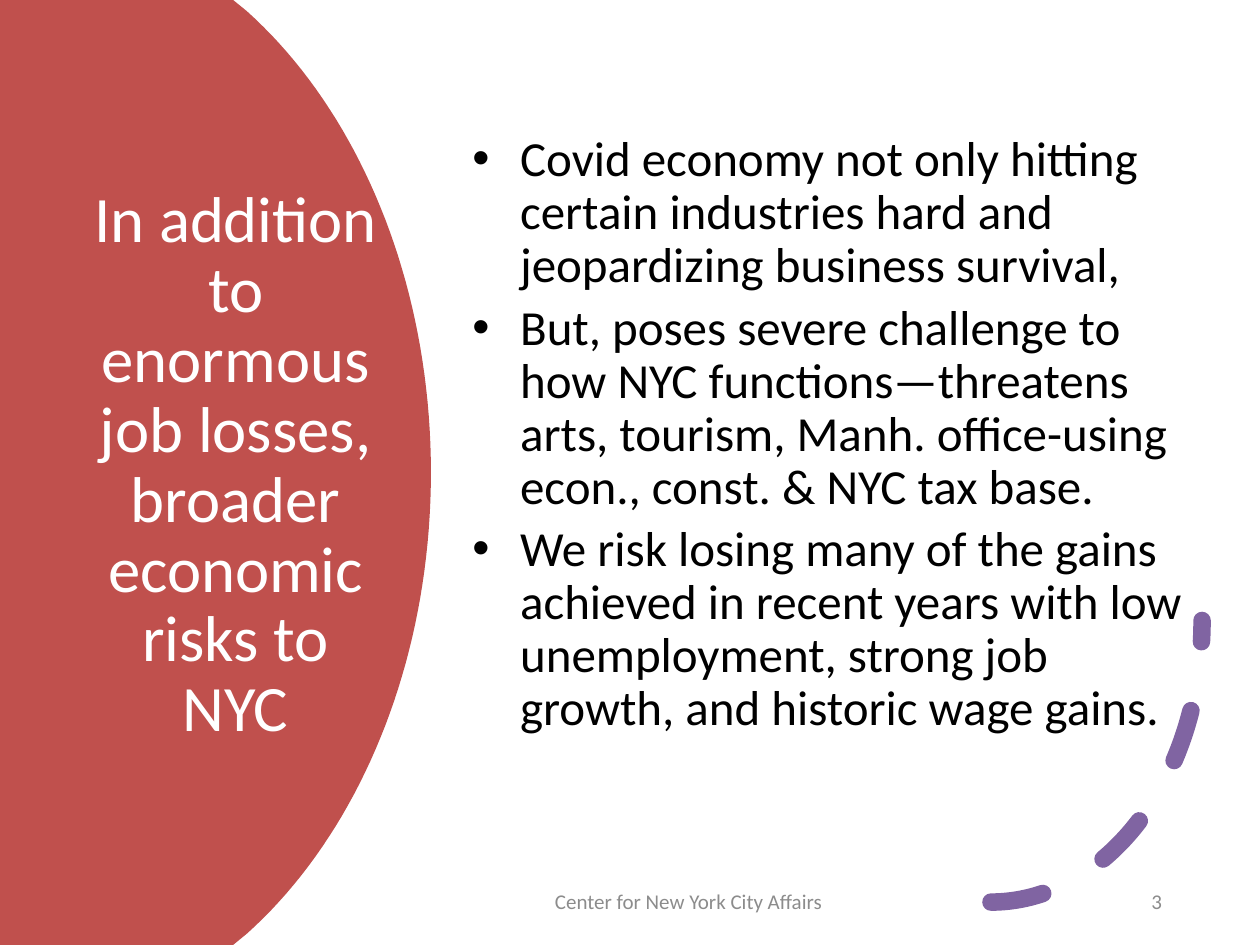
from dataclasses import dataclass

from lxml.etree import SubElement
from pptx import Presentation
from pptx.dml.color import RGBColor
from pptx.enum.dml import MSO_LINE
from pptx.enum.shapes import MSO_SHAPE as Shape
from pptx.enum.text import MSO_ANCHOR as Anchor, MSO_AUTO_SIZE as AutoSize, PP_ALIGN as Align
from pptx.oxml.ns import qn
from pptx.util import Inches, Pt


@dataclass(frozen=True)
class Theme:
    font: str = "Calibri"
    panel: RGBColor = RGBColor(0xC0, 0x50, 0x4D)
    accent: RGBColor = RGBColor(0x80, 0x64, 0xA2)
    on_panel: RGBColor = RGBColor(0xFF, 0xFF, 0xFF)
    body: RGBColor = RGBColor(0, 0, 0)
    muted: RGBColor = RGBColor(0x8C, 0x8C, 0x8C)
    title_size: int = 37
    body_size: int = 28
    footer_size: int = 12
    arc_width: int = 10
    line_spacing: float = 0.9


TITLE = "In addition to enormous job losses, broader economic risks to NYC"
RISKS = [
    "Covid economy not only hitting certain industries hard and jeopardizing business survival,",
    "But, poses severe challenge to how NYC functions—threatens arts, tourism, "
    "Manh. office-using econ., const. & NYC tax base.",
    "We risk losing many of the gains achieved in recent years with low unemployment, "
    "strong job growth, and historic wage gains.",
]


def bezier(start, control_1, control_2, end, steps=40):
    """Points along a cubic curve, both ends included."""
    points = []
    for step in range(steps + 1):
        t = step / steps
        weights = ((1 - t) ** 3, 3 * t * (1 - t) ** 2, 3 * t * t * (1 - t), t ** 3)
        points.append(tuple(sum(w * c for w, c in zip(weights, axis))
                            for axis in zip(start, control_1, control_2, end)))
    return points


class SlideBuilder:
    def __init__(self, slide, theme):
        self.slide = slide
        self.theme = theme

    def place(self, shape, left, top, width, height):
        shape.left, shape.top = Inches(left), Inches(top)
        shape.width, shape.height = Inches(width), Inches(height)

    def frame(self, shape):
        text = shape.text_frame
        text.word_wrap = True
        text.auto_size = AutoSize.NONE
        text.vertical_anchor = Anchor.MIDDLE
        return text

    def add_words(self, paragraph, words, size, color, align):
        paragraph.alignment = align
        run = paragraph.add_run()
        run.text = words
        run.font.name = self.theme.font
        run.font.size = Pt(size)
        run.font.color.rgb = color

    def panel(self, height):
        """Left panel with a bulging right edge, placed behind everything."""
        upper = [(1.85, 0)] + bezier((1.96, 0.09), (2.84, 0.88), (3.42, 2.23), (3.42, height / 2))
        lower = [(x, height - y) for x, y in reversed(upper[:-1])]
        outline = [(Inches(x), Inches(y)) for x, y in upper + lower + [(0, height)]]
        builder = self.slide.shapes.build_freeform(0, 0)
        builder.add_line_segments(outline, close=True)
        panel = builder.convert_to_shape()
        panel.shadow.inherit = False
        panel.fill.solid()
        panel.fill.fore_color.rgb = self.theme.panel
        panel.line.fill.background()
        self.slide.shapes.element.insert(2, panel.element)

    def title(self, words, *box):
        title = self.slide.shapes.title
        self.place(title, *box)
        paragraph = self.frame(title).paragraphs[0]
        paragraph.line_spacing = self.theme.line_spacing
        self.add_words(paragraph, words, self.theme.title_size, self.theme.on_panel, Align.CENTER)

    def dashed_arc(self, *box):
        arc = self.slide.shapes.add_shape(Shape.ARC, *map(Inches, box))
        arc.shadow.inherit = False
        arc.fill.background()
        arc.line.color.rgb = self.theme.accent
        arc.line.width = Pt(self.theme.arc_width)
        arc.line.dash_style = MSO_LINE.DASH
        properties = arc.element.spPr
        properties.find(qn("a:xfrm")).set("flipV", "1")
        properties.find(qn("a:ln")).set("cap", "rnd")

    def bullets(self, items, *box):
        text = self.frame(self.slide.shapes.add_textbox(*map(Inches, box)))
        for index, item in enumerate(items):
            paragraph = text.add_paragraph() if index else text.paragraphs[0]
            paragraph.line_spacing = self.theme.line_spacing
            paragraph.space_before = Pt(0.2 * self.theme.body_size)
            self.add_words(paragraph, item, self.theme.body_size, self.theme.body, Align.LEFT)
            properties = paragraph._p.get_or_add_pPr()
            properties.set("marL", str(Inches(0.38)))
            properties.set("indent", str(-Inches(0.38)))
            SubElement(properties, qn("a:buFont"), typeface="Arial")
            SubElement(properties, qn("a:buChar"), char="•")

    def footer(self, words, align, *box):
        paragraph = self.frame(self.slide.shapes.add_textbox(*map(Inches, box))).paragraphs[0]
        paragraph.space_after = Pt(6)
        self.add_words(paragraph, words, self.theme.footer_size, self.theme.muted, align)


def main():
    deck = Presentation()
    deck.slide_width, deck.slide_height = Inches(10), Inches(7.5)
    title_only = deck.slide_layouts[5]
    page = SlideBuilder(deck.slides.add_slide(title_only), Theme())
    page.panel(7.5)
    page.title(TITLE, 0.56, 1.26, 2.62, 4.88)
    page.dashed_arc(6.19, 2.69, 3.35, 4.47)
    page.bullets(RISKS, 3.65, 0.15, 6.02, 6.61)
    page.footer("Center for New York City Affairs", Align.CENTER, 3.31, 6.95, 4.31, 0.4)
    page.footer("3", Align.RIGHT, 7.83, 6.95, 1.49, 0.4)
    deck.save("out.pptx")


if __name__ == "__main__":
    main()
